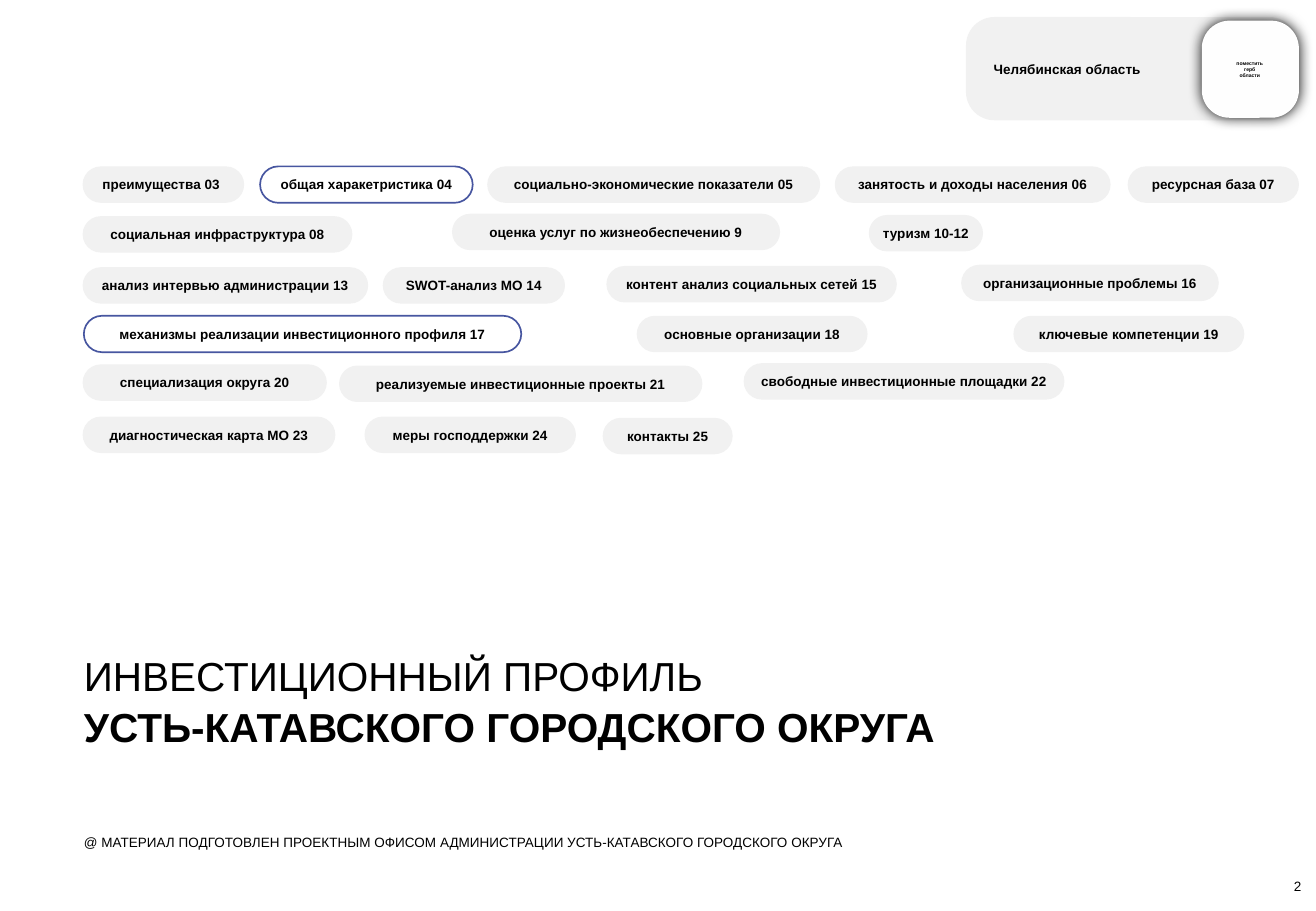
from typing import NamedTuple

from lxml.etree import SubElement
from pptx import Presentation
from pptx.dml.color import RGBColor
from pptx.enum.shapes import MSO_SHAPE
from pptx.enum.text import MSO_ANCHOR, PP_ALIGN
from pptx.oxml.ns import qn
from pptx.util import Inches, Pt

BLACK = RGBColor(0x00, 0x00, 0x00)
GREY = RGBColor(0xF1, 0xF1, 0xF1)
WHITE = RGBColor(0xFE, 0xFE, 0xFE)
BLUE = RGBColor(0x47, 0x56, 0xA0)
HIGH = 0.3


class Pill(NamedTuple):
    text: str
    left: float
    top: float
    width: float
    marked: bool = False
    pad: float = 0


class Note(NamedTuple):
    text: str
    left: float
    top: float
    width: float
    height: float
    size: float = 8
    bold: bool = False
    align: PP_ALIGN = PP_ALIGN.LEFT
    anchor: MSO_ANCHOR = MSO_ANCHOR.TOP


PILLS = [
    Pill("преимущества 03", 0.68, 1.37, 1.33, pad=0.12),
    Pill("общая харакетристика 04", 2.14, 1.37, 1.75, marked=True),
    Pill("социально-экономические показатели 05", 4.01, 1.37, 2.74),
    Pill("занятость и доходы населения 06", 6.87, 1.37, 2.27),
    Pill("ресурсная база 07", 9.28, 1.37, 1.41),
    Pill("социальная инфраструктура 08", 0.68, 1.78, 2.22),
    Pill("оценка услуг по жизнеобеспечению 9", 3.72, 1.76, 2.7),
    Pill("туризм 10-12", 7.15, 1.77, 0.94),
    Pill("анализ интервью администрации 13", 0.68, 2.2, 2.35),
    Pill("SWOT-анализ МО 14", 3.15, 2.2, 1.5),
    Pill("контент анализ социальных сетей 15", 4.99, 2.19, 2.39),
    Pill("организационные проблемы 16", 7.91, 2.18, 2.12),
    Pill("механизмы реализации инвестиционного профиля 17", 0.69, 2.6, 3.6, marked=True),
    Pill("основные организации 18", 5.24, 2.6, 1.9),
    Pill("ключевые компетенции 19", 8.34, 2.6, 1.9),
    Pill("специализация округа 20", 0.68, 3, 2.01),
    Pill("реализуемые инвестиционные проекты 21", 2.79, 3.01, 2.99),
    Pill("свободные инвестиционные площадки 22", 6.12, 2.99, 2.64),
    Pill("диагностическая карта МО 23", 0.68, 3.43, 2.08),
    Pill("меры господдержки 24", 3, 3.43, 1.74),
    Pill("контакты 25", 4.96, 3.44, 1.07),
]

NOTES = [
    Note("поместить герб области", 10.16, 0.5, 0.25, 0.15, 3, True, PP_ALIGN.CENTER),
    Note("@ МАТЕРИАЛ ПОДГОТОВЛЕН ПРОЕКТНЫМ ОФИСОМ АДМИНИСТРАЦИИ "
         "УСТЬ-КАТАВСКОГО ГОРОДСКОГО ОКРУГА", 0.69, 6.87, 8, 0.13),
    Note("2", 9.91, 7.23, 0.8, 0.13, align=PP_ALIGN.RIGHT, anchor=MSO_ANCHOR.BOTTOM),
]


def set_frame(frame, anchor: MSO_ANCHOR, left: float = 0, right: float = 0) -> None:
    frame.word_wrap = True
    frame.vertical_anchor = anchor
    frame.margin_left, frame.margin_right = Inches(left), Inches(right)
    frame.margin_top = frame.margin_bottom = 0


def set_line(line, text: str, size: float, bold: bool, align: PP_ALIGN) -> None:
    line.text = text
    line.alignment = align
    line.font.name = "Arial"
    line.font.size = Pt(size)
    line.font.bold = bold
    line.font.color.rgb = BLACK


def add_round(slide, left: float, top: float, width: float, height: float,
              curve: float, fill: RGBColor):
    shape = slide.shapes.add_shape(MSO_SHAPE.ROUNDED_RECTANGLE, Inches(left),
                                   Inches(top), Inches(width), Inches(height))
    shape.adjustments[0] = curve
    shape.shadow.inherit = False
    shape.fill.solid()
    shape.fill.fore_color.rgb = fill
    shape.line.fill.background()
    return shape


def add_pill(slide, pill: Pill) -> None:
    shape = add_round(slide, pill.left, pill.top, pill.width, HIGH, 0.5, GREY)
    if pill.marked:
        shape.fill.background()
        shape.line.color.rgb = BLUE
        shape.line.width = Pt(1)
    frame = shape.text_frame
    set_frame(frame, MSO_ANCHOR.MIDDLE, pill.pad)
    align = PP_ALIGN.LEFT if pill.pad else PP_ALIGN.CENTER
    set_line(frame.paragraphs[0], pill.text, 8, True, align)


def add_note(slide, note: Note) -> None:
    box = slide.shapes.add_textbox(Inches(note.left), Inches(note.top),
                                   Inches(note.width), Inches(note.height))
    set_frame(box.text_frame, note.anchor)
    set_line(box.text_frame.paragraphs[0], note.text, note.size, note.bold, note.align)


def add_glow(shape) -> None:
    effects = shape.element.spPr.find(qn("a:effectLst"))
    shade = SubElement(effects, qn("a:outerShdw"), blurRad=str(Pt(8.4)),
                       dist="0", dir="0", algn="ctr", rotWithShape="0")
    color = SubElement(shade, qn("a:srgbClr"), val=str(BLACK))
    SubElement(color, qn("a:alpha"), val="92000")


def add_title(slide) -> None:
    title = slide.shapes.title
    title.left, title.top = Inches(0.69), Inches(5.34)
    title.width, title.height = Inches(8), Inches(0.81)
    frame = title.text_frame
    set_frame(frame, MSO_ANCHOR.TOP)
    lines = [frame.paragraphs[0], frame.add_paragraph()]
    texts = ["ИНВЕСТИЦИОННЫЙ ПРОФИЛЬ", "УСТЬ-КАТАВСКОГО ГОРОДСКОГО ОКРУГА"]
    for line, text, bold in zip(lines, texts, [False, True]):
        set_line(line, text, 24, bold, PP_ALIGN.LEFT)
        line.line_spacing = 1.05


def main() -> None:
    deck = Presentation()
    deck.slide_width, deck.slide_height = Inches(10.83), Inches(7.5)
    slide = deck.slides.add_slide(deck.slide_layouts[5])

    # Contents and title
    for pill in PILLS:
        add_pill(slide, pill)
    add_title(slide)

    # Region badge with a place for the emblem
    badge = add_round(slide, 7.95, 0.14, 2.73, 0.85, 0.275, GREY)
    set_frame(badge.text_frame, MSO_ANCHOR.MIDDLE, 0.16, 0.79)
    set_line(badge.text_frame.paragraphs[0], "Челябинская область", 8, True, PP_ALIGN.LEFT)
    add_glow(add_round(slide, 9.89, 0.17, 0.8, 0.8, 0.286, WHITE))

    # Emblem hint, credit and page number
    for note in NOTES:
        add_note(slide, note)

    deck.save("out.pptx")


if __name__ == "__main__":
    main()
